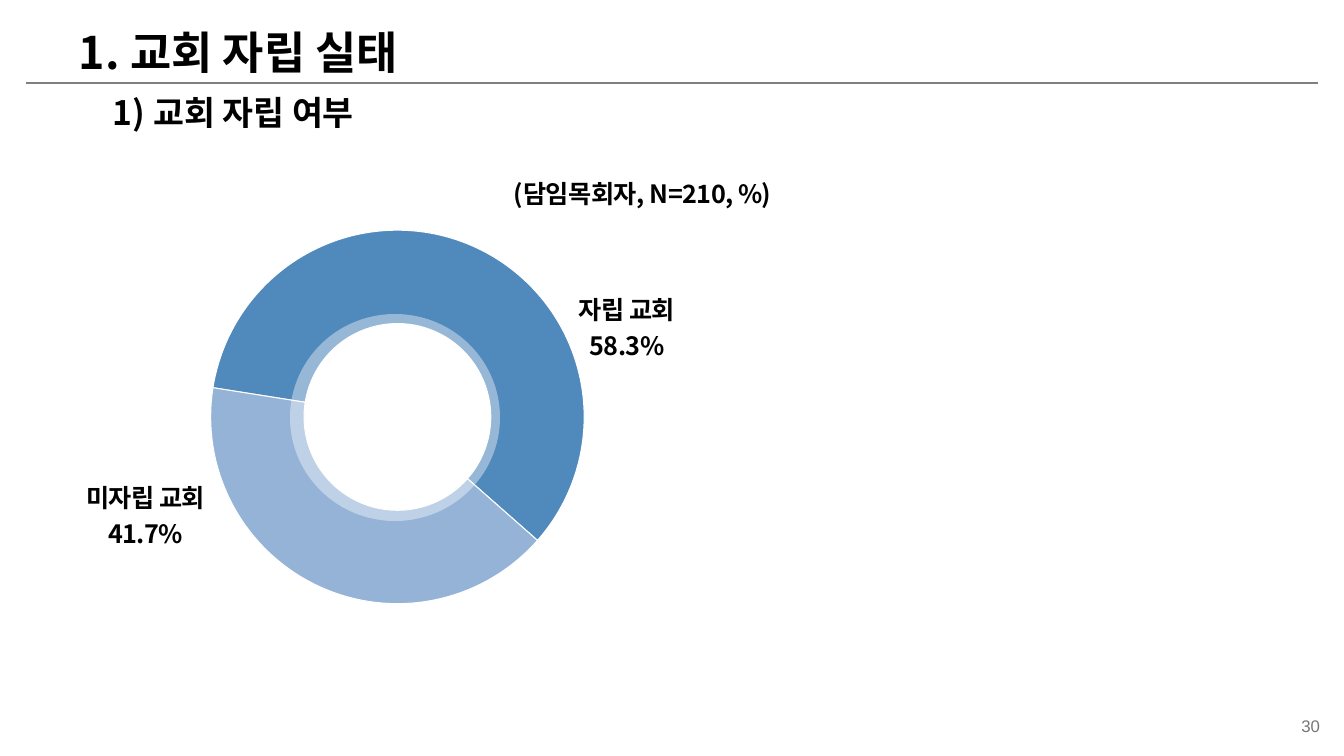
import pptx
import pptx.chart.data
import pptx.dml.color
import pptx.enum.chart
import pptx.enum.shapes
import pptx.enum.text
import pptx.oxml
import pptx.oxml.ns
import pptx.util
import lxml.etree

# Content: boxes are (left, top, width, height) in px
TITLE = ("1. 교회 자립 실태", (69, 20, 377, 65))
SUBTITLE = ("1) 교회 자립 여부", (103, 87, 291, 50))
SAMPLE_NOTE = ("(담임목회자, N=210, %)", (492, 173, 301, 40))
SHARE_LABELS = [
    ("자립 교회\n58.3%", (563, 283, 128, 84)),
    ("미자립 교회\n41.7%", (69, 471, 153, 84)),
]
PAGE_NUMBER = ("30", (1255, 711, 67, 30))
SHARES = {"1": 59, "2": 41}
RULE = (26, 83, 1318, 83)
DONUT_BOX = (198, 214, 395, 406)
INNER_RING_BOX = (297, 321, 196, 193)
DONUT_START, DONUT_HOLE = 279, 48
DONUT_PLOT = {"x": 0.03, "y": 0.04, "w": 0.95, "h": 0.92}

THEME = {
    "font": "Noto Sans CJK KR", "page_font": "Arial", "chart_font": "Calibri",
    "ink": "000000", "page": "777777", "rule": "808080", "white": "FFFFFF",
    "shares": ["5089BC", "95B3D7"],
    "title_pt": 32, "subtitle_pt": 24, "label_pt": 18, "page_pt": 12,
    "ring_alpha": 40,
}

SLIDE_W, SLIDE_H = 1344, 756
SCALE = 12192000 / SLIDE_W
ALIGN = pptx.enum.text.PP_ALIGN
qn = pptx.oxml.ns.qn


def px(*lengths):
    return [round(length * SCALE) for length in lengths]


def rgb(name):
    return pptx.dml.color.RGBColor.from_string(name)


def add_text(text, box, size, align=ALIGN.LEFT, color=THEME["ink"], font=THEME["font"],
             bold=True, spacing=0, leading=None, anchor=pptx.enum.text.MSO_ANCHOR.TOP,
             side=10):
    frame = slide.shapes.add_textbox(*px(*box)).text_frame
    frame.word_wrap = False
    frame.vertical_anchor = anchor
    frame.margin_left, frame.margin_right = px(side, side)
    for number, line in enumerate(text.split("\n")):
        paragraph = frame.paragraphs[0] if number == 0 else frame.add_paragraph()
        paragraph.alignment = align
        paragraph.line_spacing = leading
        run = paragraph.add_run()
        run.text = line
        run.font.size = pptx.util.Pt(size)
        run.font.bold = bold
        run.font.name = font
        run.font.color.rgb = rgb(color)
        properties = run.font._element
        lxml.etree.SubElement(properties, qn("a:ea")).set("typeface", font)
        if spacing:
            properties.set("spc", str(spacing))


presentation = pptx.Presentation()
presentation.slide_width, presentation.slide_height = px(SLIDE_W, SLIDE_H)
slide = presentation.slides.add_slide(presentation.slide_layouts[6])

# Page number and heading rule
add_text(*PAGE_NUMBER, THEME["page_pt"], align=ALIGN.RIGHT, color=THEME["page"],
         font=THEME["page_font"], bold=False, side=2,
         anchor=pptx.enum.text.MSO_ANCHOR.BOTTOM)
heading_rule = slide.shapes.add_connector(
    pptx.enum.shapes.MSO_CONNECTOR.STRAIGHT, *px(*RULE))
heading_rule.line.color.rgb = rgb(THEME["rule"])
heading_rule.line.width = pptx.util.Pt(1)
lxml.etree.SubElement(heading_rule._element.spPr, qn("a:effectLst"))

# Doughnut of self-supporting and dependent churches
share_data = pptx.chart.data.CategoryChartData()
share_data.categories = list(SHARES)
share_data.add_series("Series 1", list(SHARES.values()))
donut = slide.shapes.add_chart(
    pptx.enum.chart.XL_CHART_TYPE.DOUGHNUT, *px(*DONUT_BOX), share_data).chart
donut.has_legend = False
donut.has_title = False
donut.font.name = THEME["chart_font"]
donut.font.size = pptx.util.Pt(THEME["label_pt"])
donut.font.color.rgb = rgb(THEME["ink"])
share_plot = donut.plots[0]
share_plot.vary_by_categories = True
share_plot.has_data_labels = False
for index, color in enumerate(THEME["shares"]):
    slice_format = share_plot.series[0].points[index].format
    slice_format.fill.solid()
    slice_format.fill.fore_color.rgb = rgb(color)
    slice_format.line.color.rgb = rgb(THEME["white"])
    slice_format.line.width = pptx.util.Pt(0.75)

# Doughnut rotation, hole and plot area
plot_area = donut._chartSpace.find(".//" + qn("c:plotArea"))
plot_area.find(".//" + qn("c:firstSliceAng")).set("val", str(DONUT_START))
plot_area.find(".//" + qn("c:holeSize")).set("val", str(DONUT_HOLE))
for old_layout in plot_area.findall(qn("c:layout")):
    plot_area.remove(old_layout)
layout = lxml.etree.Element(qn("c:layout"))
manual = lxml.etree.SubElement(layout, qn("c:manualLayout"))
settings = {"layoutTarget": "inner", "xMode": "edge", "yMode": "edge", **DONUT_PLOT}
for tag, value in settings.items():
    lxml.etree.SubElement(manual, qn("c:" + tag)).set("val", str(value))
plot_area.insert(0, layout)

# Translucent ring around the hole
inner_ring = slide.shapes.add_shape(
    pptx.enum.shapes.MSO_SHAPE.OVAL, *px(*INNER_RING_BOX))
inner_ring.shadow.inherit = False
inner_ring.fill.background()
inner_ring.line.color.rgb = rgb(THEME["white"])
inner_ring.line.width = pptx.util.Pt(10)
ring_color = inner_ring._element.spPr.find(".//" + qn("a:srgbClr"))
lxml.etree.SubElement(ring_color, qn("a:alpha")).set(
    "val", str(THEME["ring_alpha"] * 1000))

# Share labels, sample note and headings
for label, box in SHARE_LABELS:
    add_text(label, box, THEME["label_pt"], align=ALIGN.CENTER, spacing=-40, leading=1.2)
add_text(*SAMPLE_NOTE, THEME["label_pt"], align=ALIGN.CENTER, spacing=-40)
add_text(*TITLE, THEME["title_pt"])
add_text(*SUBTITLE, THEME["subtitle_pt"])

presentation.save("out.pptx")
